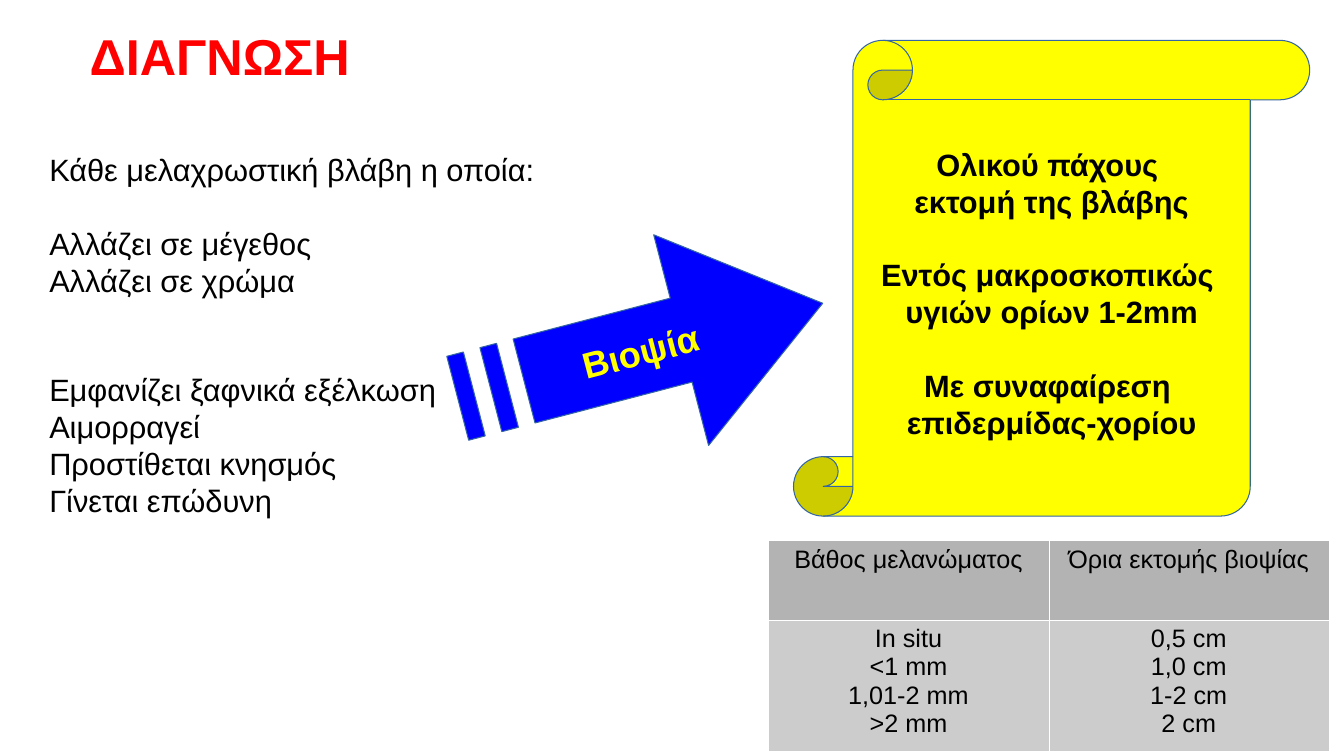
from dataclasses import dataclass

from lxml.etree import SubElement
from pptx import Presentation
from pptx.dml.color import RGBColor
from pptx.enum.shapes import MSO_SHAPE
from pptx.enum.text import MSO_ANCHOR, PP_ALIGN
from pptx.oxml.ns import qn
from pptx.util import Inches, Pt


@dataclass(frozen=True)
class Theme:
    font: str = "Arial"
    title_size: int = 36
    arrow_size: int = 26
    body_size: int = 22
    table_size: int = 18
    line_gap: float = 26  # height of one skipped body line, in points
    red: str = "FF0000"
    blue: str = "0000FF"
    yellow: str = "FFFF00"
    black: str = "000000"
    white: str = "FFFFFF"
    outline: str = "3465A4"
    header_gray: str = "B3B3B3"
    body_gray: str = "CCCCCC"


THEME = Theme()

SYMPTOM_GROUPS = [
    (0, ["Κάθε μελαχρωστική βλάβη η οποία:"]),
    (1, ["Αλλάζει σε μέγεθος", "Αλλάζει σε χρώμα"]),
    (2, ["Εμφανίζει ξαφνικά εξέλκωση", "Αιμορραγεί",
         "Προστίθεται κνησμός", "Γίνεται επώδυνη"]),
]
EXCISION_GROUPS = [
    (0, ["Ολικού πάχους ", "εκτομή της βλάβης"]),
    (1, ["Εντός μακροσκοπικώς ", "υγιών ορίων 1-2mm"]),
    (1, ["Με συναφαίρεση ", "επιδερμίδας-χορίου"]),
]
MARGIN_ROWS = [
    (["Βάθος μελανώματος"], ["Όρια εκτομής βιοψίας"]),
    (["In situ", "<1 mm", "1,01-2 mm", ">2 mm"],
     ["0,5 cm", "1,0 cm", "1-2 cm", "2 cm"]),
]


def write_text(frame, groups, size, color=THEME.black, bold=False,
               align=PP_ALIGN.LEFT, anchor=MSO_ANCHOR.TOP, wrap=True):
    """Write groups of (skipped lines before, lines) into a text frame."""
    frame.word_wrap = wrap
    frame.vertical_anchor = anchor
    entries = [(skipped if index == 0 else 0, line)
               for skipped, lines in groups for index, line in enumerate(lines)]
    for number, (skipped, line) in enumerate(entries):
        paragraph = frame.add_paragraph() if number else frame.paragraphs[0]
        paragraph.alignment = align
        if skipped:
            paragraph.space_before = Pt(skipped * THEME.line_gap)
        run = paragraph.add_run()
        run.text = line
        run.font.name = THEME.font
        run.font.size = Pt(size)
        run.font.bold = bold
        run.font.color.rgb = RGBColor.from_string(color)


def paint(shape, fill):
    shape.shadow.inherit = False
    shape.fill.solid()
    shape.fill.fore_color.rgb = RGBColor.from_string(fill)
    shape.line.color.rgb = RGBColor.from_string(THEME.outline)
    shape.line.width = Pt(0)


def add_text_box(slide, box, groups, size, **style):
    text_box = slide.shapes.add_textbox(*map(Inches, box))
    write_text(text_box.text_frame, groups, size, **style)


def add_biopsy_arrow(slide, box):
    left, top, width, height = box
    stripe, head, half_shaft = 0.17, 1.45, 0.43
    middle, right = top + height / 2, left + width
    upper, lower = middle - half_shaft, middle + half_shaft
    shaft_start, head_start = left + 4 * stripe, right - head
    outlines = [[
        (head_start, top), (right, middle), (head_start, top + height),
        (head_start, lower), (shaft_start, lower),
        (shaft_start, upper), (head_start, upper),
    ]]
    # Two stripes behind the shaft, separated by gaps of their own width
    for start in (left, left + 2 * stripe):
        end = start + stripe
        outlines.append([(start, upper), (start, lower), (end, lower), (end, upper)])

    builder = slide.shapes.build_freeform(
        Inches(outlines[0][0][0]), Inches(outlines[0][0][1]))
    for index, points in enumerate(outlines):
        corners = [(Inches(x), Inches(y)) for x, y in points]
        if index:
            builder.move_to(*corners[0])
        builder.add_line_segments(corners[1:], close=True)
    arrow = builder.convert_to_shape()
    arrow.rotation = 345.4
    paint(arrow, THEME.blue)
    write_text(arrow.text_frame, [(0, ["Βιοψία"])], THEME.arrow_size,
               color=THEME.yellow, bold=True, align=PP_ALIGN.CENTER,
               anchor=MSO_ANCHOR.MIDDLE, wrap=False)


def add_excision_scroll(slide, box):
    scroll = slide.shapes.add_shape(MSO_SHAPE.VERTICAL_SCROLL, *map(Inches, box))
    scroll.adjustments[0] = 0.125
    paint(scroll, THEME.yellow)
    write_text(scroll.text_frame, EXCISION_GROUPS, THEME.body_size, bold=True,
               align=PP_ALIGN.CENTER, anchor=MSO_ANCHOR.MIDDLE, wrap=False)


def set_cell_borders(cell):
    properties = cell._tc.get_or_add_tcPr()
    for position, side in enumerate(("a:lnL", "a:lnR", "a:lnT", "a:lnB")):
        line = properties.makeelement(qn(side), {"w": "720"})
        fill = SubElement(line, qn("a:solidFill"))
        SubElement(fill, qn("a:srgbClr"), val=THEME.white)
        properties.insert(position, line)


def add_margin_table(slide, box):
    table = slide.shapes.add_table(
        len(MARGIN_ROWS), len(MARGIN_ROWS[0]), *map(Inches, box)).table
    table.horz_banding = False
    for row, cells in enumerate(MARGIN_ROWS):
        for column, lines in enumerate(cells):
            cell = table.cell(row, column)
            cell.fill.solid()
            cell.fill.fore_color.rgb = RGBColor.from_string(
                THEME.body_gray if row else THEME.header_gray)
            set_cell_borders(cell)
            write_text(cell.text_frame, [(0, lines)], THEME.table_size,
                       align=PP_ALIGN.CENTER)


def build_diagnosis_slide(presentation):
    slide = presentation.slides.add_slide(presentation.slide_layouts[6])
    # Title and symptoms
    add_text_box(slide, (0.79, 0.2, 6.89, 0.79), [(0, ["ΔΙΑΓΝΩΣΗ"])],
                 THEME.title_size, color=THEME.red, bold=True)
    add_text_box(slide, (0.39, 1.45, 6.49, 3.86), SYMPTOM_GROUPS, THEME.body_size)
    # Biopsy and how it is done
    add_biopsy_arrow(slide, (4.48, 2.4, 3.74, 2.16))
    add_excision_scroll(slide, (7.87, 0.4, 5.12, 4.72))
    # Excision margins by depth
    add_margin_table(slide, (7.62, 5.36, 5.56, 1.58))


def main():
    presentation = Presentation()
    presentation.slide_width = Inches(13.33)
    presentation.slide_height = Inches(7.5)
    build_diagnosis_slide(presentation)
    presentation.save("out.pptx")


if __name__ == "__main__":
    main()
